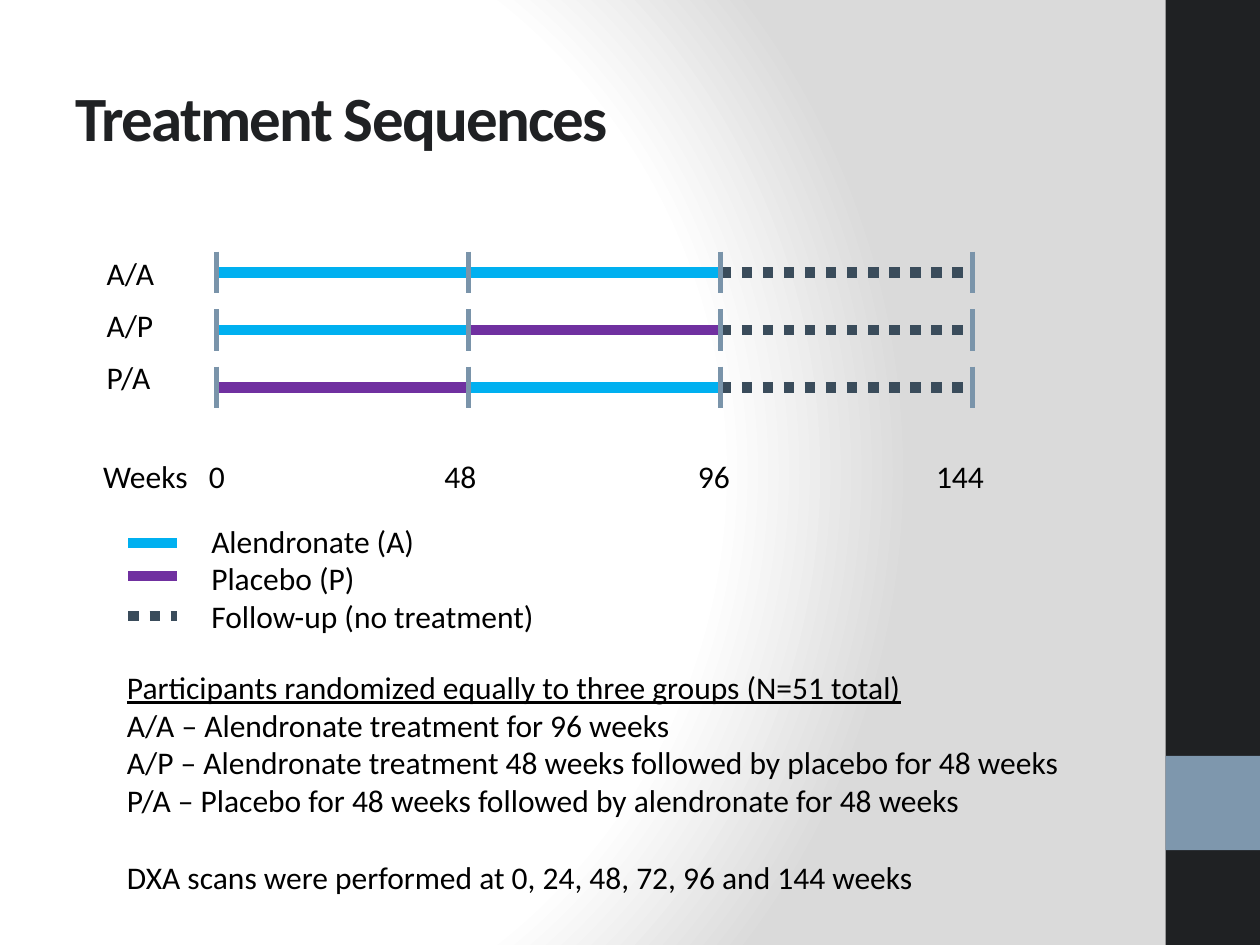
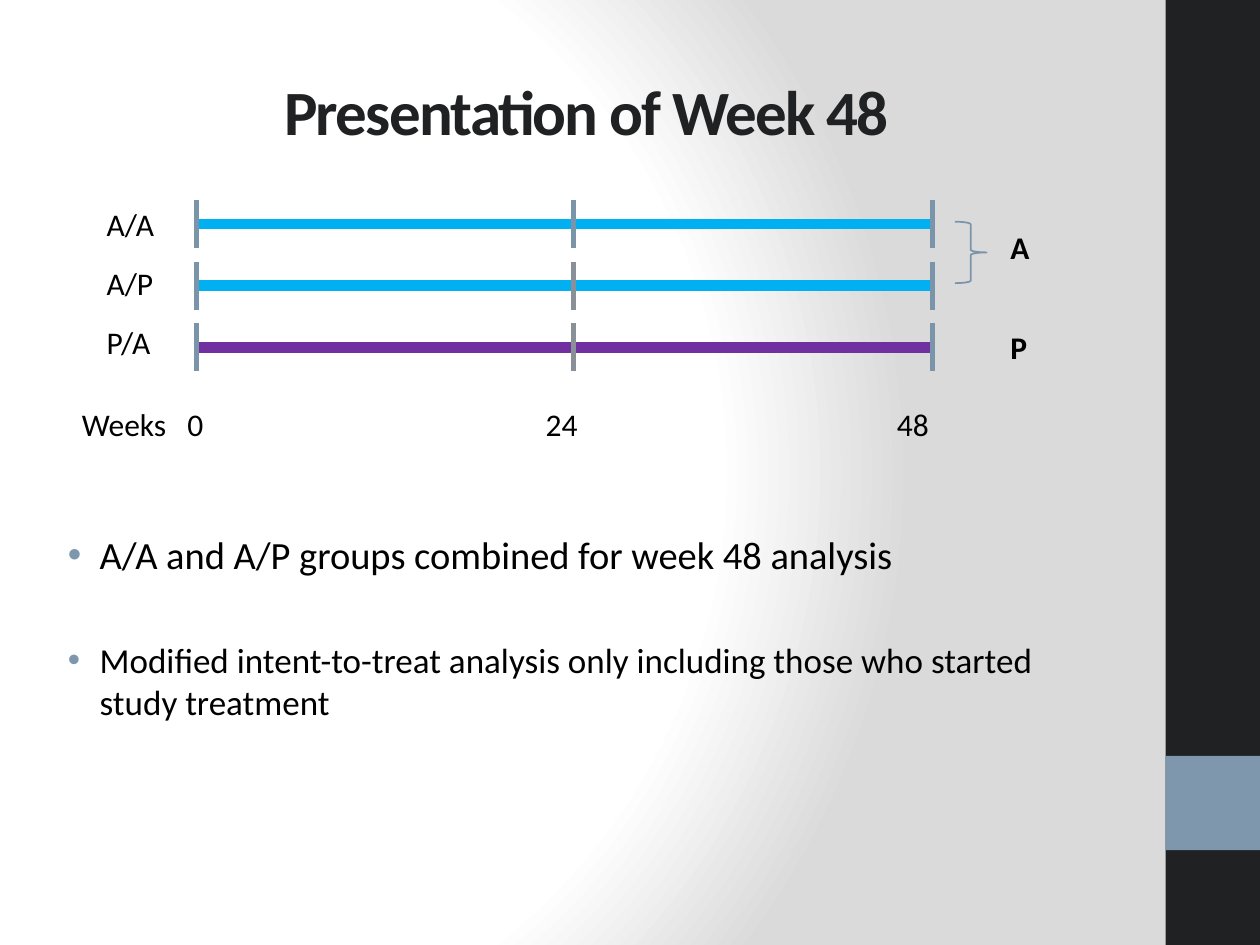
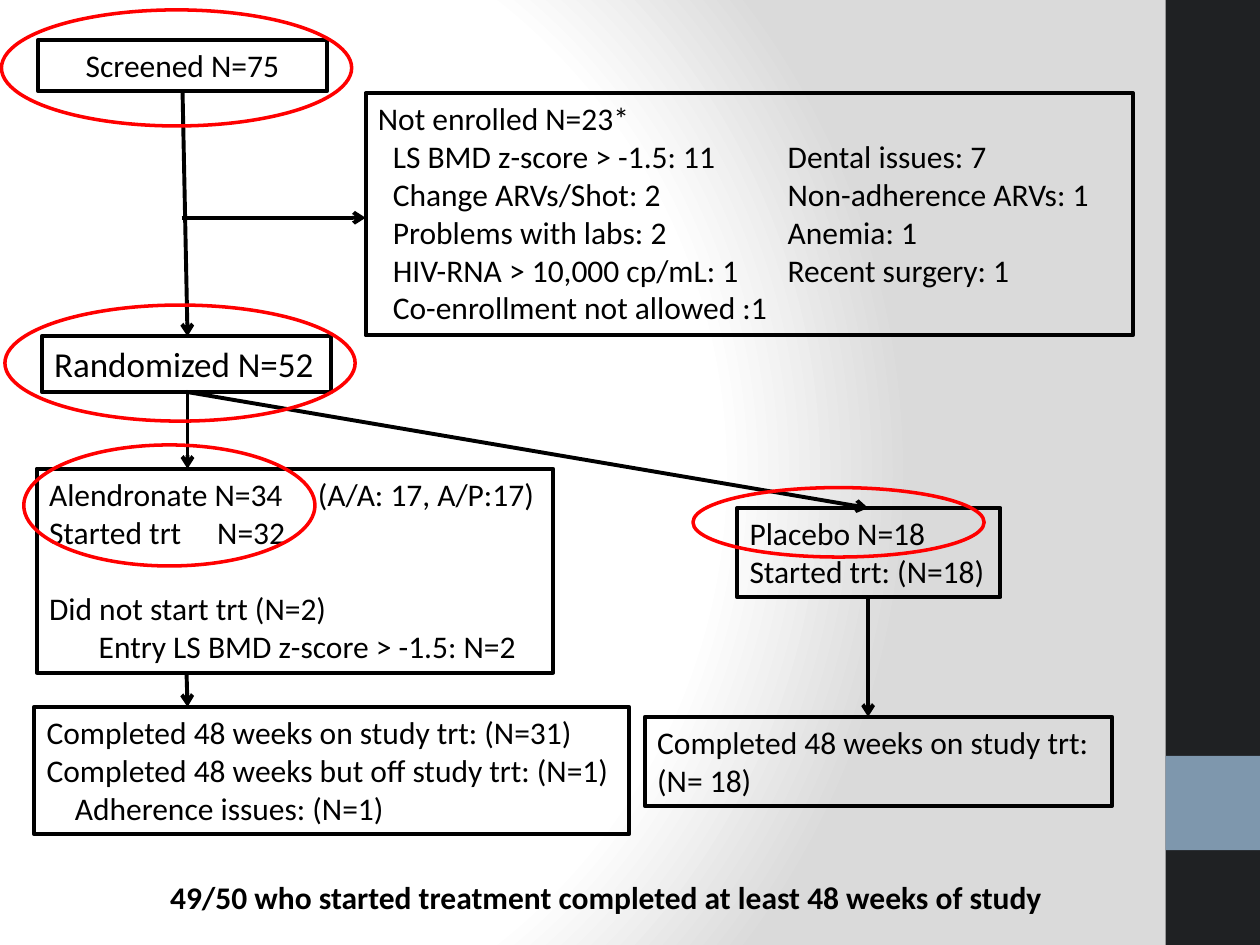
from dataclasses import dataclass
from pptx import Presentation
from pptx.dml.color import RGBColor as Color
from pptx.enum.dml import MSO_LINE as Dash
from pptx.enum.shapes import MSO_CONNECTOR as Connector, MSO_SHAPE as Shape
from pptx.enum.text import MSO_ANCHOR as Anchor, PP_ALIGN as Align
from pptx.oxml import parse_xml
from pptx.oxml.ns import nsdecls, qn
from pptx.util import Cm, Pt


@dataclass(frozen=True)
class Theme:
    font: str = "Calibri"
    title: int = 36
    large: int = 22
    medium: int = 20
    body: int = 18
    ink: str = "000000"
    dark: str = "1F2123"
    accent: str = "7E97AD"
    tick: str = "7A94AA"
    grey_tick: str = "899097"
    alendronate: str = "00B0F0"
    placebo: str = "7030A0"
    follow_up: str = "3A4C5B"
    highlight: str = "FF0000"
    light: str = "FFFFFF"
    shade: str = "DADADA"


theme = Theme()


def write(box, text, size=theme.body, color=theme.ink, bold=False, underline=False,
          align=Align.LEFT, anchor=Anchor.TOP, before=0, after=0, tabs=(), bullet=False, spacing=0):
    frame = box.text_frame
    frame.word_wrap = True
    frame.vertical_anchor = anchor
    if align == Align.LEFT:
        frame.margin_right = 0
    for line in text.split("\n"):
        para = frame.add_paragraph() if frame.text else frame.paragraphs[0]
        para.alignment = align
        para.space_before, para.space_after = Pt(before), Pt(after)
        props = para._p.get_or_add_pPr()
        if bullet:
            props.set("marL", str(int(Cm(0.95))))
            props.set("indent", str(int(Cm(-0.64))))
            props.append(parse_xml(f'<a:buClr {nsdecls("a")}><a:srgbClr val="{theme.accent}"/></a:buClr>'))
            props.append(parse_xml(f'<a:buFont {nsdecls("a")} typeface="Arial"/>'))
            props.append(parse_xml(f'<a:buChar {nsdecls("a")} char="•"/>'))
        if tabs:
            stops = "".join(f'<a:tab pos="{int(Cm(stop))}" algn="l"/>' for stop in tabs)
            props.append(parse_xml(f'<a:tabLst {nsdecls("a")}>{stops}</a:tabLst>'))
        span = para.add_run()
        span.text = line
        span.font.name, span.font.size = theme.font, Pt(size)
        span.font.bold, span.font.underline = bold, underline
        span.font.color.rgb = Color.from_string(color)
        if spacing:
            span._r.get_or_add_rPr().set("spc", str(spacing * 100))


def draw_line(page, start, end, color, width, arrow=False):
    line = page.shapes.add_connector(Connector.STRAIGHT, *map(Cm, start + end))
    line.line.color.rgb = Color.from_string(color)
    line.line.width = Pt(width)
    if color == theme.follow_up:
        line.line.dash_style = Dash.ROUND_DOT
    props = line.element.spPr
    if arrow:
        props.find(qn("a:ln")).append(parse_xml(f'<a:tailEnd {nsdecls("a")} type="arrow"/>'))
    props.append(parse_xml(f'<a:effectLst {nsdecls("a")}/>'))


deck = Presentation()
deck.slide_width, deck.slide_height = Cm(25.4), Cm(19.05)

master = deck.slide_master
master.background.fill.solid()
background = master.element.find(".//" + qn("p:bgPr"))
stops = "".join(f'<a:gs pos="{place}"><a:srgbClr val="{color}"/></a:gs>'
                for place, color in [(0, theme.light), (75000, theme.light), (100000, theme.shade)])
background.replace(background[0], parse_xml(
    f'<a:gradFill {nsdecls("a")} rotWithShape="1"><a:gsLst>{stops}</a:gsLst><a:path path="circle">'
    '<a:fillToRect l="20000" t="50000" r="100000" b="50000"/></a:path></a:gradFill>'))

pages = [deck.slides.add_slide(deck.slide_layouts[6]) for _ in range(3)]
sequence_page, week_page, flow_page = pages
for page in pages:
    for top, height, color in [(0, 19.05, theme.dark), (15.24, 1.9, theme.accent)]:
        band = page.shapes.add_shape(Shape.RECTANGLE, Cm(23.5), Cm(top), Cm(1.9), Cm(height))
        band.shadow.inherit = False
        band.fill.solid()
        band.fill.fore_color.rgb = Color.from_string(color)
        band.line.fill.background()

active, placebo, follow_up = theme.alendronate, theme.placebo, theme.follow_up
timelines = [
    (sequence_page, [4.37, 9.45, 14.53, 19.61], 5.49, 1.16, 0.42,
     [[active, active, follow_up], [active, placebo, follow_up], [placebo, active, follow_up]]),
    (week_page, [3.96, 11.56, 18.8], 4.52, 1.24, 0.48,
     [[active, active], [active, active], [placebo, placebo]]),
]
for page, weeks, top, step, reach, groups in timelines:
    for row, colors in enumerate(groups):
        level = top + row * step
        for start, end, color in zip(weeks, weeks[1:], colors):
            draw_line(page, (start, level), (end, level), color, 6)
        for column, week in enumerate(weeks):
            grey = page is week_page and column == 1 and row > 0
            draw_line(page, (week, level - reach), (week, level + reach),
                      theme.grey_tick if grey else theme.tick, 3)

for level, color in [(10.95, active), (11.61, placebo), (12.42, follow_up)]:
    draw_line(sequence_page, (2.59, level), (3.56, level), color, 6)

brace = week_page.shapes.add_shape(Shape.RIGHT_BRACE, Cm(19.25), Cm(4.47), Cm(0.64), Cm(1.24))
brace.shadow.inherit = False
brace.fill.background()
brace.line.color.rgb = Color.from_string(theme.tick)
brace.line.width = Pt(1)

heading = dict(size=theme.title, color=theme.dark, bold=True, anchor=Anchor.MIDDLE, spacing=-1)
group_names = "A/A\nA/P\nP/A"
texts = [
    (sequence_page, (1.27, 0.76, 21.16, 3.18), [("Treatment Sequences", heading)]),
    (sequence_page, (1.83, 9.09, 19.2, 1.02),
     [("Weeks\t0\t48\t96\t144", dict(tabs=(2.13, 6.88, 11.99, 16.79)))]),
    (sequence_page, (1.9, 5, 1.48, 3.12), [(group_names, dict(after=8))]),
    (sequence_page, (4.01, 10.39, 8.05, 2.57),
     [("Alendronate (A)\nPlacebo (P)\nFollow-up (no treatment)", {})]),
    (sequence_page, (2.31, 13.34, 19.51, 4.88), [
        ("Participants randomized equally to three groups (N=51 total)", dict(underline=True)),
        ("A/A – Alendronate treatment for 96 weeks\n"
         "A/P – Alendronate treatment 48 weeks followed by placebo for 48 weeks\n"
         "P/A – Placebo for 48 weeks followed by alendronate for 48 weeks", {}),
        ("DXA scans were performed at 0, 24, 48, 72, 96 and 144 weeks", dict(before=22)),
    ]),
    (week_page, (1.24, 0.64, 21.16, 3.18),
     [("Presentation of Week 48", dict(heading, align=Align.CENTER))]),
    (week_page, (0.81, 10.59, 21.49, 5.08), [
        ("A/A and A/P groups combined for week 48 analysis", dict(size=theme.large, bullet=True)),
        ("Modified intent-to-treat analysis only including those who started study treatment",
         dict(size=theme.medium, bullet=True, before=35)),
    ]),
    (week_page, (1.9, 4.01, 1.48, 3.43), [(group_names, dict(after=12))]),
    (week_page, (1.4, 8.05, 18.2, 1.02), [("Weeks\t0\t24\t48", dict(tabs=(2.13, 9.35, 16.43)))]),
    (week_page, (20.12, 4.47, 0.9, 1.02), [("A", dict(bold=True))]),
    (week_page, (20.12, 6.48, 0.9, 1.02), [("P", dict(bold=True))]),
    (flow_page, (3.18, 17.58, 18.24, 1.02),
     [("49/50 who started treatment completed at least 48 weeks of study", dict(bold=True))]),
]
for page, place, lines in texts:
    box = page.shapes.add_textbox(*map(Cm, place))
    for text, style in lines:
        write(box, text, **style)

steps = [
    ((7.37, 1.88, 15.47, 4.88), [
        ("Not enrolled N=23*", {}),
        ("\tLS BMD z-score > -1.5: 11\tDental issues: 7\n"
         "\tChange ARVs/Shot: 2\tNon-adherence ARVs: 1\n"
         "\tProblems with labs: 2\tAnemia: 1\n"
         "\tHIV-RNA > 10,000 cp/mL: 1\tRecent surgery: 1\n"
         "\tCo-enrollment not allowed :1", dict(tabs=(0.3, 8.26))),
    ]),
    ((0.84, 6.78, 5.84, 1.12), [("Randomized N=52", dict(size=theme.medium))]),
    ((0.74, 9.45, 10.41, 4.11), [
        ("Alendronate N=34\t(A/A: 17, A/P:17)", dict(tabs=(5.42,))),
        ("Started trt\tN=32", dict(tabs=(3.39,))),
        ("Did not start trt (N=2)", dict(before=22)),
        ("\tEntry LS BMD z-score > -1.5: N=2", dict(tabs=(1,))),
    ]),
    ((14.86, 10.24, 5.31, 1.8), [("Placebo N=18\nStarted trt: (N=18)", {})]),
    ((0.69, 14.25, 11.99, 2.57), [
        ("Completed 48 weeks on study trt: (N=31)\n"
         "Completed 48 weeks but off study trt: (N=1)", {}),
        ("\tAdherence issues: (N=1)", dict(tabs=(0.57,))),
    ]),
    ((13, 14.45, 9.42, 1.8), [("Completed 48 weeks on study trt: (N= 18)", {})]),
    ((0.76, 0.81, 5.84, 1.02), [("Screened N=75", dict(align=Align.CENTER))]),
]
arrows = [
    ((3.68, 1.85), (3.78, 6.78)), ((3.66, 4.39), (7.37, 4.39)),
    ((3.78, 7.9), (3.78, 9.45)), ((3.76, 7.9), (17.5, 10.24)),
    ((3.76, 13.56), (3.78, 14.25)), ((17.5, 12.01), (17.5, 14.45)),
]
rings = [(0.03, 0.2, 7.06, 2.34), (0.1, 6.15, 7.06, 2.34),
         (0.48, 8.97, 5.87, 2.44), (13.97, 9.83, 5.87, 1.4)]

for start, end in arrows:
    draw_line(flow_page, start, end, theme.ink, 2.25, arrow=True)
outlines = [(Shape.RECTANGLE, place, lines, theme.ink, 2.25) for place, lines in steps]
outlines += [(Shape.OVAL, place, [], theme.highlight, 2) for place in rings]
for kind, place, lines, color, width in outlines:
    box = flow_page.shapes.add_shape(kind, *map(Cm, place))
    box.shadow.inherit = False
    box.fill.background()
    box.line.color.rgb = Color.from_string(color)
    box.line.width = Pt(width)
    for text, style in lines:
        write(box, text, **style)

deck.save("out.pptx")
